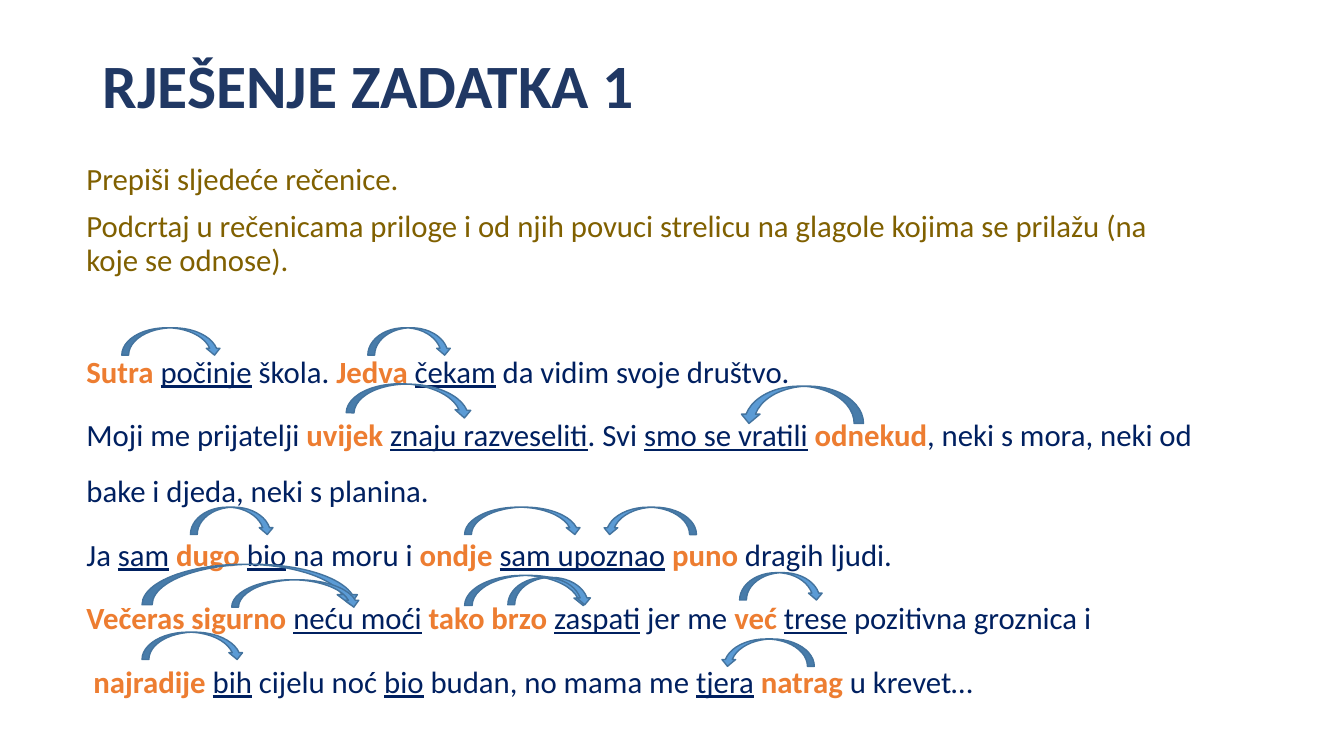
"""Builds the solution slide for the adverb exercise."""
import dataclasses

import pptx
import pptx.dml.color
import pptx.enum.shapes
import pptx.enum.text
import pptx.util

Cm = pptx.util.Cm
Pt = pptx.util.Pt


@dataclasses.dataclass(frozen=True)
class Theme:
    """Colours, font and type sizes of the slide."""
    font: str = "Calibri"
    title: str = "203864"
    task: str = "806000"
    sentence: str = "002060"
    adverb: str = "ED7D31"
    arrow_fill: str = "5B9BD5"
    arrow_line: str = "43739E"
    title_size: int = 44
    body_size: int = 22


THEME = Theme()

TASKS = [
    "Prepiši sljedeće rečenice.",
    "Podcrtaj u rečenicama priloge i od njih povuci strelicu na glagole "
    "kojima se prilažu (na koje se odnose).",
]

SENTENCES = [
    "*Sutra |_počinje| škola. |*Jedva |_čekam| da vidim svoje društvo.",
    "Moji me prijatelji |*uvijek |_znaju razveseliti|. Svi |_smo se vratili| |*odnekud|"
    ", neki s mora, neki od bake i djeda, neki s planina.",
    "Ja |_sam| |*dugo |_bio| na moru i |*ondje |_sam upoznao| |*puno| dragih ljudi.",
    "*Večeras sigurno |_neću moći| |*tako brzo |_zaspati| jer me |*već |_trese"
    "| pozitivna groznica i",
    " |*najradije |_bih| cijelu noć |_bio| budan, no mama me |_tjera| |*natrag| u krevet…",
]

FORWARD_ARROWS = [
    (8.74, 9.68, 3.18, 0.79, 2.6),
    (9.27, 8.26, 2.11, 0.69, 0),
    (4.8, 12.78, 2.11, 0.69, 0),
    (11.71, 12.78, 2.95, 0.69, 0),
    (3.58, 14.22, 5.51, 1.02, 0),
    (5.84, 14.61, 3.25, 0.69, 0),
    (11.71, 14.5, 3.18, 0.76, 0),
    (12.8, 14.55, 2.11, 0.69, 0),
    (18.64, 14.43, 2.11, 0.69, 0),
    (3.58, 15.93, 2.57, 0.69, 0),
    (3.07, 8.26, 2.51, 0.69, 0),
]

BACKWARD_ARROWS = [
    (18.64, 9.73, 3.12, 0.94, 180),
    (15.19, 12.78, 2.36, 0.69, 180),
    (18.16, 16.1, 2.36, 0.69, 180),
]


def rgb(value):
    """Return the colour for a hexadecimal string."""
    return pptx.dml.color.RGBColor.from_string(value)


def add_text_frame(slide, left, top, width, height, anchor):
    """Add a wrapping text box and return its text frame."""
    box = slide.shapes.add_textbox(Cm(left), Cm(top), Cm(width), Cm(height))
    frame = box.text_frame
    frame.word_wrap = True
    frame.vertical_anchor = anchor
    return frame


def add_run(paragraph, text, *, color, size=THEME.body_size, bold=False, underline=False):
    """Append formatted text to a paragraph."""
    run = paragraph.add_run()
    run.text = text
    run.font.name = THEME.font
    run.font.size = Pt(size)
    run.font.bold = bold
    run.font.underline = underline
    run.font.color.rgb = rgb(color)


def add_paragraph(frame, *, line_spacing, space_before=0):
    """Return the next spaced paragraph, using the first one while it is empty."""
    first = frame.paragraphs[0]
    paragraph = frame.add_paragraph() if first.runs else first
    paragraph.line_spacing = line_spacing
    paragraph.space_before = Pt(space_before)
    return paragraph


def add_sentence(frame, marked_text, space_before):
    """Add a sentence in which * marks adverbs and _ marks verbs."""
    paragraph = add_paragraph(frame, line_spacing=1.5, space_before=space_before)
    for part in filter(None, marked_text.split("|")):
        adverb, verb = part.startswith("*"), part.startswith("_")
        add_run(paragraph, part.lstrip("*_"), bold=adverb, underline=verb,
                color=THEME.adverb if adverb else THEME.sentence)


def add_arrow(slide, kind, left, top, width, height, rotation):
    """Add a curved arrow that links an adverb to its verb."""
    arrow = slide.shapes.add_shape(kind, Cm(left), Cm(top), Cm(width), Cm(height))
    arrow.rotation = rotation
    arrow.shadow.inherit = False
    arrow.fill.solid()
    arrow.fill.fore_color.rgb = rgb(THEME.arrow_fill)
    arrow.line.color.rgb = rgb(THEME.arrow_line)
    arrow.line.width = Pt(1)


def main():
    """Build and save the presentation."""
    presentation = pptx.Presentation()
    presentation.slide_width, presentation.slide_height = Cm(33.87), Cm(19.05)
    slide = presentation.slides.add_slide(presentation.slide_layouts[6])
    anchors = pptx.enum.text.MSO_ANCHOR
    kinds = pptx.enum.shapes.MSO_SHAPE

    title = add_text_frame(slide, 2.34, 1.02, 29.21, 2.41, anchors.MIDDLE)
    add_run(add_paragraph(title, line_spacing=0.9), "RJEŠENJE ZADATKA 1",
            color=THEME.title, size=THEME.title_size, bold=True)

    body = add_text_frame(slide, 1.93, 4.01, 28.37, 14.2, anchors.TOP)
    for task in TASKS:
        paragraph = add_paragraph(body, line_spacing=0.9, space_before=10)
        add_run(paragraph, task, color=THEME.task)
    for index, sentence in enumerate(SENTENCES):
        add_sentence(body, sentence, space_before=6 if index else 40)

    for arrow in FORWARD_ARROWS:
        add_arrow(slide, kinds.CURVED_DOWN_ARROW, *arrow)
    for arrow in BACKWARD_ARROWS:
        add_arrow(slide, kinds.CURVED_UP_ARROW, *arrow)

    presentation.save("out.pptx")


if __name__ == "__main__":
    main()
